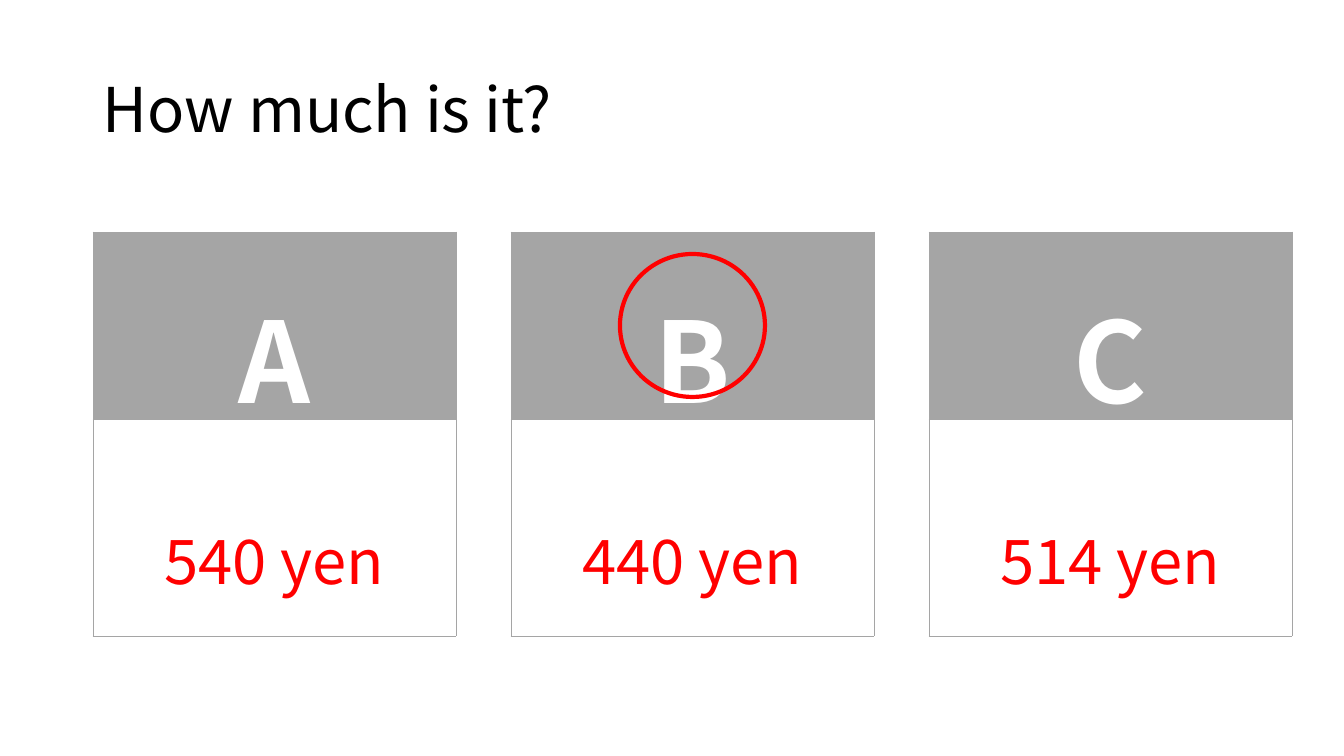
from lxml import etree
from pptx import Presentation
from pptx.dml.color import RGBColor
from pptx.enum.shapes import MSO_SHAPE
from pptx.enum.text import MSO_ANCHOR, PP_ALIGN
from pptx.oxml.ns import qn
from pptx.util import Pt

ELLIPSE = MSO_SHAPE.OVAL
TOP, MIDDLE = MSO_ANCHOR.TOP, MSO_ANCHOR.MIDDLE
LEFT, CENTER = PP_ALIGN.LEFT, PP_ALIGN.CENTER

EMU_PER_PX = 914400 / 100.8
COLORS = {"ink": "000000", "paper": "FFFFFF", "card": "A5A5A5", "accent": "FF0000"}
FONT = "Noto Sans CJK JP"


def px(*lengths):
    return [round(length * EMU_PER_PX) for length in lengths]


def rgb(color):
    return RGBColor.from_string(COLORS[color])


def assign(target, values):
    for name, value in values.items():
        setattr(target, name, value)


class QuizSlide:
    def __init__(self, presentation):
        self.shapes = presentation.slides.add_slide(presentation.slide_layouts[6]).shapes

    def add_wording(self, paragraph, wording, size, color, bold=False, align=LEFT):
        paragraph.alignment = align
        run = paragraph.add_run()
        run.text = wording
        assign(run.font, {"name": FONT, "size": Pt(size), "bold": bold})
        run.font.color.rgb = rgb(color)

    def title(self, box, wording):
        frame = self.shapes.add_textbox(*px(*box)).text_frame
        assign(frame, {"word_wrap": True, "vertical_anchor": MIDDLE})
        heading = frame.paragraphs[0]
        heading.line_spacing = 0.9
        self.add_wording(heading, wording, 44, "ink")

    def border(self, cell):
        properties = cell._tc.get_or_add_tcPr()
        for side in ("a:lnL", "a:lnR", "a:lnT", "a:lnB"):
            line = etree.SubElement(properties, qn(side), w=str(Pt(0.5)))
            fill = etree.SubElement(line, qn("a:solidFill"))
            etree.SubElement(fill, qn("a:srgbClr"), val=COLORS["card"])

    def card(self, box, rows):
        table = self.shapes.add_table(len(rows), 1, *px(*box)).table
        assign(table, {"first_row": False, "horz_banding": False})
        for index, (height, margin, fill, wording, style) in enumerate(rows):
            table.rows[index].height = px(height)[0]
            cell = table.cell(index, 0)
            margin_top, margin_bottom = px(margin, 5)
            assign(cell, {"margin_top": margin_top, "margin_bottom": margin_bottom,
                          "vertical_anchor": TOP})
            self.border(cell)
            cell.fill.solid()
            cell.fill.fore_color.rgb = rgb(fill)
            self.add_wording(cell.text_frame.paragraphs[0], wording, align=CENTER, **style)

    def ring(self, box):
        ring = self.shapes.add_shape(ELLIPSE, *px(*box))
        ring.shadow.inherit = False
        ring.fill.background()
        ring.line.color.rgb = rgb("accent")
        ring.line.width = Pt(3)


def main():
    presentation = Presentation()
    slide_width, slide_height = px(1344, 756)
    assign(presentation, {"slide_width": slide_width, "slide_height": slide_height})
    quiz = QuizSlide(presentation)

    # Question
    quiz.title((93, 40, 1159, 146), "How much is it?")

    # Answer cards: letter above price
    letter_style = {"size": 80, "color": "paper", "bold": True}
    price_style = {"size": 44, "color": "accent"}
    answers = [("A", "540 yen"), ("B", "440 yen"), ("C", "514 yen")]
    for column, (letter, price) in enumerate(answers):
        quiz.card((93 + 418 * column, 232, 363, 404), [
            (187, 41, "card", letter, letter_style),
            (217, 94, "paper", price, price_style),
        ])

    # Correct answer
    quiz.ring((620, 254, 145, 143))

    presentation.save("out.pptx")


if __name__ == "__main__":
    main()
